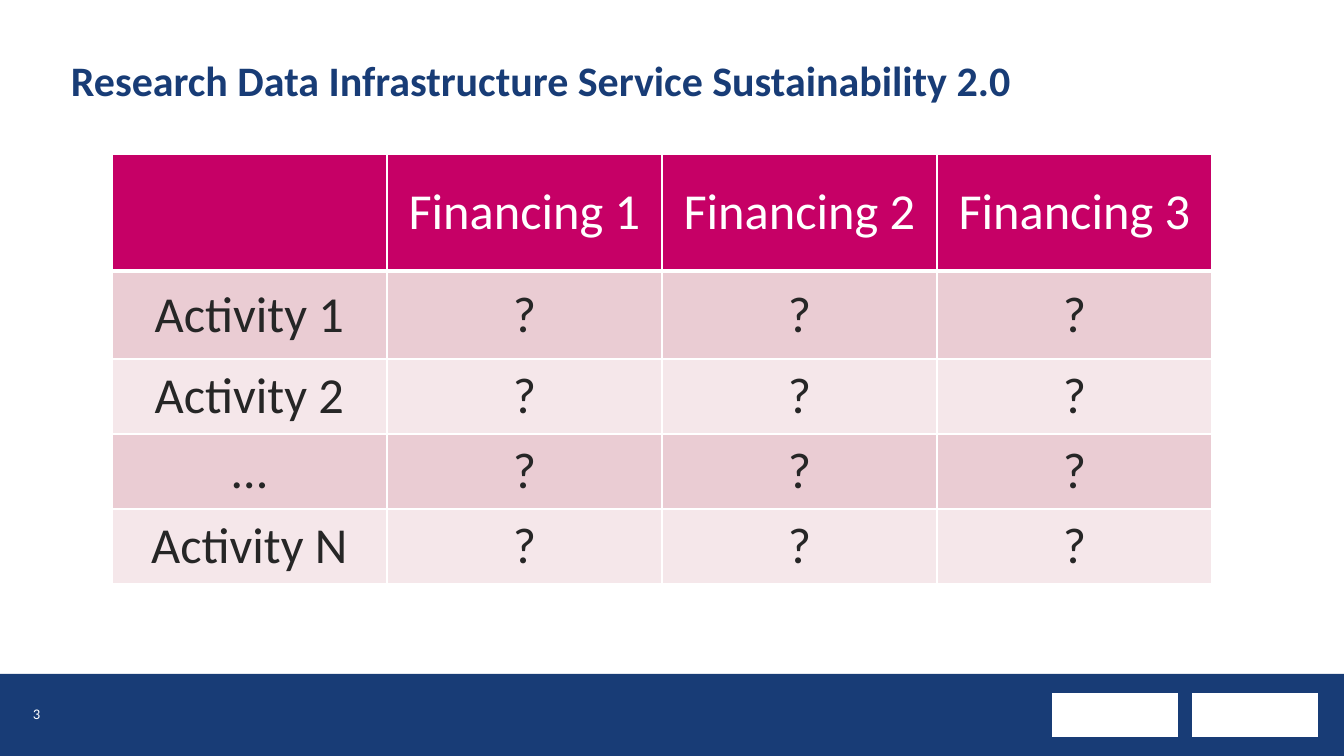
from lxml import etree
from pptx import Presentation
from pptx import util as u
from pptx.dml.color import RGBColor
from pptx.enum import shapes, text
from pptx.oxml.ns import qn

PX = 914400 / 100.8
FONT = "Calibri"
NAVY, WHITE, MAGENTA, INK = "183C76", "FFFFFF", "C60066", "262626"
BANDS = ["EACCD3", "F5E7EA"]

TITLE = "Research Data Infrastructure Service Sustainability 2.0"
PAGE = "3"
ROWS = [
    ["", "Financing 1", "Financing 2", "Financing 3"],
    ["Activity 1", "?", "?", "?"],
    ["Activity 2", "?", "?", "?"],
    ["…", "?", "?", "?"],
    ["Activity N", "?", "?", "?"],
]
ROW_HEIGHTS = [117, 88, 75, 75, 75]
COL_WIDTH = 275
TABLE_LEFT, TABLE_TOP = 112, 154
BLOCKS = [
    (0, 674, 1344, 82, NAVY),
    (1052, 693, 126, 44, WHITE),
    (1192, 693, 126, 44, WHITE),
]


def px(n):
    return u.Emu(round(n * PX))


def rgb(h):
    return RGBColor.from_string(h)


def add_run(p, words, size, color, bold=False):
    r = p.add_run()
    r.text = words
    r.font.name = FONT
    r.font.size = u.Pt(size)
    r.font.bold = bold
    r.font.color.rgb = rgb(color)


def add_text(s, box, words, size, color, bold=False, anchor=text.MSO_ANCHOR.TOP, spacing=1.0):
    tf = s.shapes.add_textbox(*map(px, box)).text_frame
    tf.word_wrap = True
    tf.vertical_anchor = anchor
    p = tf.paragraphs[0]
    p.line_spacing = spacing
    add_run(p, words, size, color, bold)


def add_borders(cell, bottom):
    tcPr = cell._tc.get_or_add_tcPr()
    for side, points in (("L", 1), ("R", 1), ("T", 1), ("B", bottom)):
        ln = etree.SubElement(tcPr, qn("a:ln" + side), w=str(u.Pt(points)))
        fill = etree.SubElement(ln, qn("a:solidFill"))
        etree.SubElement(fill, qn("a:srgbClr"), val=WHITE)


def add_matrix(s):
    cols = len(ROWS[0])
    size = (COL_WIDTH * cols, sum(ROW_HEIGHTS))
    frame = s.shapes.add_table(len(ROWS), cols, *map(px, (TABLE_LEFT, TABLE_TOP, *size)))
    table = frame.table
    for col in table.columns:
        col.width = px(COL_WIDTH)
    for i, row in enumerate(ROWS):
        table.rows[i].height = px(ROW_HEIGHTS[i])
        header = i == 0
        for j, words in enumerate(row):
            cell = table.cell(i, j)
            add_borders(cell, 3 if header else 1)
            cell.fill.solid()
            cell.fill.fore_color.rgb = rgb(MAGENTA if header else BANDS[(i - 1) % 2])
            cell.vertical_anchor = text.MSO_ANCHOR.MIDDLE
            if words:
                p = cell.text_frame.paragraphs[0]
                p.alignment = text.PP_ALIGN.CENTER
                add_run(p, words, 36, WHITE if header else INK)


def main():
    prs = Presentation()
    prs.slide_width, prs.slide_height = px(1344), px(756)
    s = prs.slides.add_slide(prs.slide_layouts[6])
    for *box, color in BLOCKS:
        sp = s.shapes.add_shape(shapes.MSO_SHAPE.RECTANGLE, *map(px, box))
        sp.shadow.inherit = False
        sp.fill.solid()
        sp.fill.fore_color.rgb = rgb(color)
        sp.line.fill.background()
    add_text(s, (61, 55, 1234, 126), TITLE, 30, NAVY, bold=True, spacing=0.9)
    add_text(s, (23, 694, 299, 40), PAGE, 10.5, WHITE, anchor=text.MSO_ANCHOR.MIDDLE)
    add_matrix(s)
    prs.save("out.pptx")


if __name__ == "__main__":
    main()
